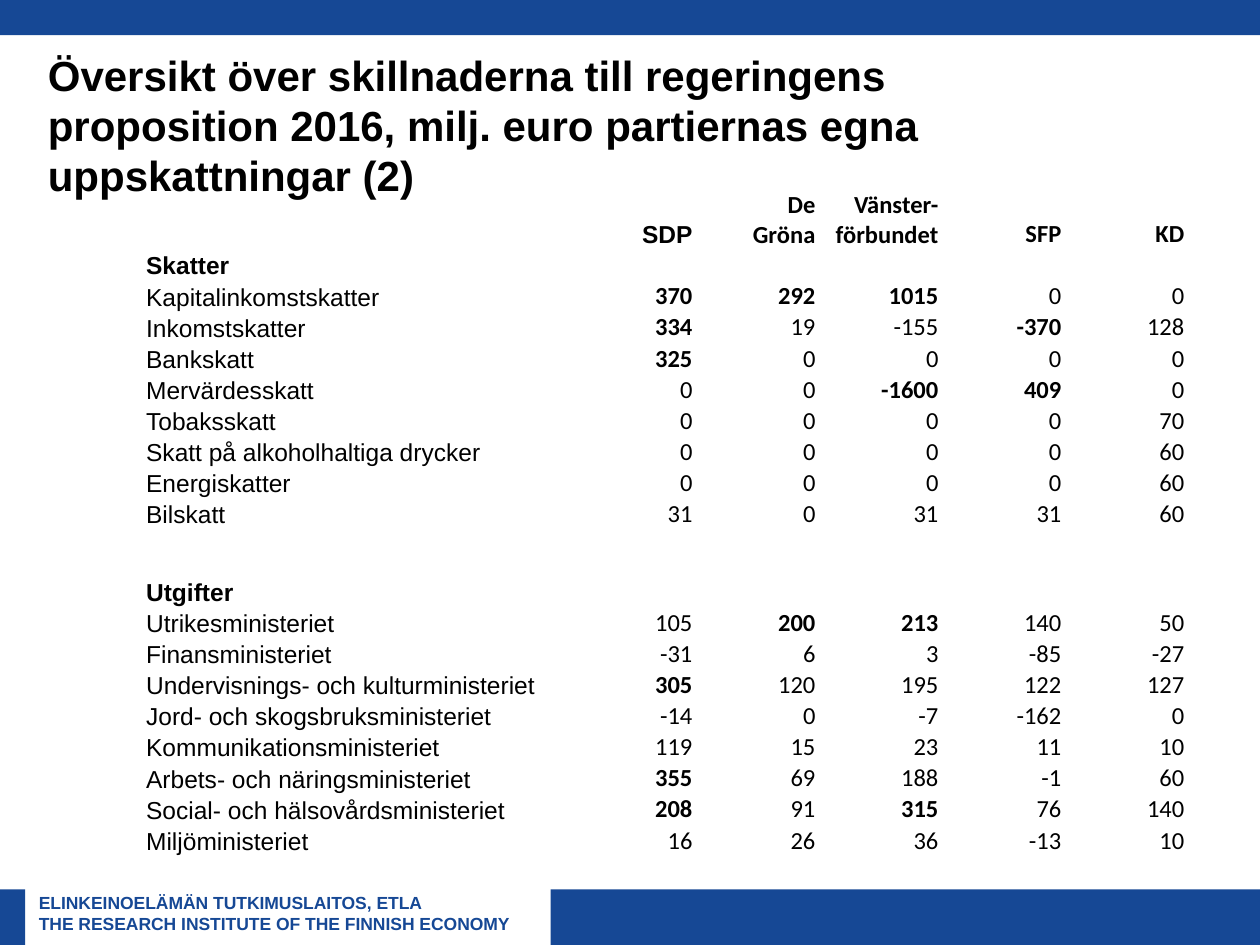
from dataclasses import dataclass

from lxml import etree
from pptx import Presentation
from pptx import util as u
from pptx.dml.color import RGBColor
from pptx.enum import shapes, text
from pptx.oxml.ns import qn


@dataclass(frozen=True)
class Theme:
    blue: RGBColor = RGBColor(0x16, 0x48, 0x95)
    black: RGBColor = RGBColor(0, 0, 0)
    sans: str = "Arial"
    figure: str = "Calibri"
    title: int = 24
    cell: int = 14
    foot: int = 10


@dataclass(frozen=True)
class Bar:
    left: float
    top: float
    width: float
    height: float


@dataclass(frozen=True)
class Row:
    label: str
    values: tuple[int, ...] = ()


THEME = Theme()
LIMIT = 200  # figures of at least this size are bold

BARS = [
    Bar(4.37, 7.06, 5.63, 0.44),
    Bar(0, 0, 10, 0.28),
    Bar(0, 7.06, 0.2, 0.44),
]
PARTIES = ["SDP", "De\vGröna", "Vänster-\vförbundet", "SFP", "KD"]
ROWS = [
    Row("Skatter"),
    Row("Kapitalinkomstskatter", (370, 292, 1015, 0, 0)),
    Row("Inkomstskatter", (334, 19, -155, -370, 128)),
    Row("Bankskatt", (325, 0, 0, 0, 0)),
    Row("Mervärdesskatt", (0, 0, -1600, 409, 0)),
    Row("Tobaksskatt", (0, 0, 0, 0, 70)),
    Row("Skatt på alkoholhaltiga drycker", (0, 0, 0, 0, 60)),
    Row("Energiskatter", (0, 0, 0, 0, 60)),
    Row("Bilskatt", (31, 0, 31, 31, 60)),
    Row(""),
    Row("Utgifter"),
    Row("Utrikesministeriet", (105, 200, 213, 140, 50)),
    Row("Finansministeriet", (-31, 6, 3, -85, -27)),
    Row("Undervisnings- och kulturministeriet", (305, 120, 195, 122, 127)),
    Row("Jord- och skogsbruksministeriet", (-14, 0, -7, -162, 0)),
    Row("Kommunikationsministeriet", (119, 15, 23, 11, 10)),
    Row("Arbets- och näringsministeriet", (355, 69, 188, -1, 60)),
    Row("Social- och hälsovårdsministeriet", (208, 91, 315, 76, 140)),
    Row("Miljöministeriet", (16, 26, 36, -13, 10)),
]


def style(para, size: int, color: RGBColor, bold: bool, face: str) -> None:
    for run in para.runs:
        font = run.font
        font.size, font.bold, font.name = u.Pt(size), bold, face
        font.color.rgb = color


def draw_bar(slide, bar: Bar) -> None:
    shape = slide.shapes.add_shape(
        shapes.MSO_SHAPE.RECTANGLE, u.Inches(bar.left), u.Inches(bar.top),
        u.Inches(bar.width), u.Inches(bar.height))
    shape.shadow.inherit = False
    shape.fill.solid()
    shape.fill.fore_color.rgb = THEME.blue
    shape.line.fill.background()


def draw_foot(slide) -> None:
    box = slide.shapes.add_textbox(
        u.Inches(0.21), u.Inches(7.03), u.Inches(4.17), u.Inches(0.43))
    frame = box.text_frame
    frame.word_wrap = True
    frame.text = ("ELINKEINOELÄMÄN TUTKIMUSLAITOS, ETLA\n"
                  "THE RESEARCH INSTITUTE OF THE FINNISH ECONOMY")
    for para in frame.paragraphs:
        style(para, THEME.foot, THEME.blue, True, THEME.sans)


def draw_title(slide) -> None:
    title = slide.shapes.title
    title.left, title.top = u.Inches(0.28), u.Inches(0.44)
    title.width, title.height = u.Inches(8.58), u.Inches(1.1)
    frame = title.text_frame
    frame.text = ("Översikt över skillnaderna till regeringens proposition 2016, "
                  "milj. euro partiernas egna uppskattningar (2)")
    frame.auto_size = text.MSO_AUTO_SIZE.NONE
    frame.vertical_anchor = text.MSO_ANCHOR.MIDDLE
    para = frame.paragraphs[0]
    para.alignment = text.PP_ALIGN.LEFT
    style(para, THEME.title, THEME.black, True, THEME.sans)


def clear_cell(cell) -> None:
    cell.fill.background()
    cell.vertical_anchor = text.MSO_ANCHOR.BOTTOM
    cell.margin_left = cell.margin_right = cell.margin_top = u.Inches(0.01)
    cell.margin_bottom = 0
    # No borders; these elements come before the fill
    props = cell._tc.get_or_add_tcPr()
    for spot, side in enumerate("LRTB"):
        line = etree.Element(qn(f"a:ln{side}"), w="0")
        etree.SubElement(line, qn("a:noFill"))
        props.insert(spot, line)
    # Empty cells must not stretch their row
    etree.SubElement(cell.text_frame.paragraphs[0]._p, qn("a:endParaRPr"),
                     sz=str(THEME.cell * 100))


def fill_cell(cell, words: str, bold: bool, face: str, right: bool = True) -> None:
    cell.text_frame.text = words
    para = cell.text_frame.paragraphs[0]
    para.alignment = text.PP_ALIGN.RIGHT if right else text.PP_ALIGN.LEFT
    style(para, THEME.cell, THEME.black, bold, face)


def draw_table(slide) -> None:
    width, height, lead = 8.82, 5.29, [0.56, 1.39, 1.99]
    first = len(lead)
    cols = lead + [(width - sum(lead)) / len(PARTIES)] * len(PARTIES)
    head, gap = 0.47, 0.37
    plain = (height - head - gap) / (len(ROWS) - 1)
    highs = [head] + [plain if row.label else gap for row in ROWS]
    table = slide.shapes.add_table(
        len(highs), len(cols), u.Inches(0.59), u.Inches(1.5),
        u.Inches(width), u.Inches(height)).table
    table.first_row = table.horz_banding = False
    # The "No Style, No Grid" table style
    table._tbl.tblPr.find(qn("a:tableStyleId")).text = (
        "{2D5ABB26-0587-4C30-8999-92F81FD0307C}")
    for col, wide in zip(table.columns, cols):
        col.width = u.Inches(wide)
    for line, high in zip(table.rows, highs):
        line.height = u.Inches(high)
    for cell in table.iter_cells():
        clear_cell(cell)

    # Party names
    for col, party in enumerate(PARTIES, first):
        face = THEME.sans if col == first else THEME.figure
        fill_cell(table.cell(0, col), party, True, face)

    # Section heads and figures
    for num, row in enumerate(ROWS, 1):
        if row.label:
            fill_cell(table.cell(num, 1), row.label, not row.values,
                      THEME.sans, right=False)
        if row.values:
            table.cell(num, 1).merge(table.cell(num, 2))
        for col, value in enumerate(row.values, first):
            fill_cell(table.cell(num, col), str(value),
                      abs(value) >= LIMIT, THEME.figure)


def main() -> None:
    deck = Presentation()
    deck.slide_width, deck.slide_height = u.Inches(10), u.Inches(7.5)
    slide = deck.slides.add_slide(deck.slide_layouts[0])
    sub = slide.placeholders[1].element
    sub.getparent().remove(sub)

    for bar in BARS:
        draw_bar(slide, bar)
    draw_foot(slide)
    draw_title(slide)
    draw_table(slide)
    deck.save("out.pptx")


if __name__ == "__main__":
    main()
